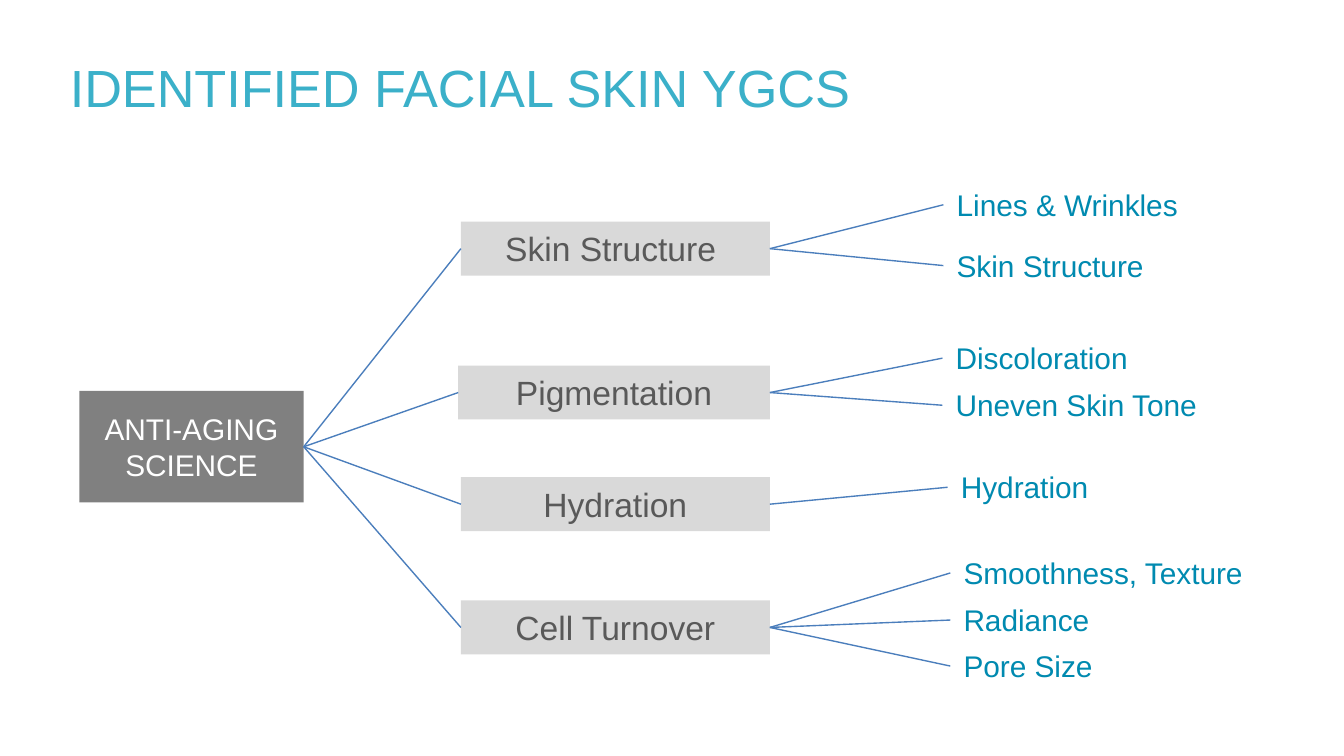
import pptx
import pptx.util
import pptx.dml.color
import pptx.enum.shapes
import pptx.enum.text
import pptx.oxml.ns
from lxml import etree

Cm = pptx.util.Cm
Pt = pptx.util.Pt
RGB = pptx.dml.color.RGBColor
Align = pptx.enum.text.PP_ALIGN
Anchor = pptx.enum.text.MSO_ANCHOR
Fit = pptx.enum.text.MSO_AUTO_SIZE

AQUA = RGB(0x3B, 0xB0, 0xC9)
TEAL = RGB(0x00, 0x8A, 0xB0)
DARK = RGB(0x80, 0x80, 0x80)
PALE = RGB(0xD9, 0xD9, 0xD9)
INK = RGB(0x59, 0x59, 0x59)
WHITE = RGB(0xFF, 0xFF, 0xFF)
BLUE = RGB(0x4B, 0x7E, 0xBC)

EDGE = 14.55
GROUPS = [
    ("Skin Structure ", 8.71, 4.19, 17.83,
     [("Lines & Wrinkles", 3.4), ("Skin Structure", 4.55)]),
    ("Pigmentation", 8.66, 6.91, 17.81,
     [("Discoloration", 6.3), ("Uneven Skin Tone", 7.19)]),
    ("Hydration", 8.71, 9.02, 17.91, [("Hydration", 8.74)]),
    ("Cell Turnover", 8.71, 11.35, 17.96,
     [("Smoothness, Texture", 10.36), ("Radiance", 11.25), ("Pore Size", 12.12)]),
]


def write(shape, text, size, color, align=Align.LEFT, anchor=Anchor.TOP, fit=Fit.NONE):
    frame = shape.text_frame
    frame.text = text
    frame.word_wrap = True
    frame.auto_size = fit
    frame.vertical_anchor = anchor
    para = frame.paragraphs[0]
    para.alignment = align
    font = para.runs[0].font
    font.name = "Arial"
    font.size = Pt(size)
    font.color.rgb = color


def add_title(slide, box, text):
    shape = slide.shapes.add_textbox(*map(Cm, box))
    write(shape, text, 28, AQUA, anchor=Anchor.MIDDLE)


def add_block(slide, box, fill):
    kind = pptx.enum.shapes.MSO_SHAPE.RECTANGLE
    shape = slide.shapes.add_shape(kind, *map(Cm, box))
    shape.shadow.inherit = False
    shape.fill.solid()
    shape.fill.fore_color.rgb = fill
    shape.line.fill.background()
    return shape


def add_root(slide, box, text):
    shape = add_block(slide, box, DARK)
    write(shape, text, 16, WHITE, Align.CENTER, Anchor.MIDDLE)
    return shape


def add_branch(slide, box, text):
    shape = add_block(slide, box, PALE)
    write(shape, text, 18, INK, Align.CENTER, fit=Fit.SHAPE_TO_FIT_TEXT)
    return shape


def add_leaf(slide, box, text):
    shape = slide.shapes.add_textbox(*map(Cm, box))
    write(shape, text, 16, TEAL, fit=Fit.SHAPE_TO_FIT_TEXT)
    return shape


def link(slide, start, end):
    kind = pptx.enum.shapes.MSO_CONNECTOR.STRAIGHT
    line = slide.shapes.add_connector(kind, 0, 0, 0, 0)
    line.begin_connect(start, 3)
    line.end_connect(end, 1)
    line.line.color.rgb = BLUE
    line.line.width = Pt(0.75)
    etree.SubElement(line._element.spPr, pptx.oxml.ns.qn("a:effectLst"))


def add_tree(slide, box):
    root = add_root(slide, box, "ANTI-AGING SCIENCE")
    pairs = []
    nodes = []
    for text, left, top, _, _ in GROUPS:
        node = add_branch(slide, (left, top, EDGE - left, 1.02), text)
        nodes.append(node)
        pairs.append((root, node))
    for node, (_, _, _, left, items) in zip(nodes, GROUPS):
        for text, top in items:
            pairs.append((node, add_leaf(slide, (left, top, 6.6, 0.94), text)))
    for start, end in pairs:
        link(slide, start, end)


def main():
    deck = pptx.Presentation()
    deck.slide_width = Cm(25.4)
    deck.slide_height = Cm(14.29)
    slide = deck.slides.add_slide(deck.slide_layouts[6])
    add_title(slide, (1.07, 0.69, 25.2, 1.9), "IDENTIFIED FACIAL SKIN YGCS")
    add_tree(slide, (1.5, 7.39, 4.24, 2.11))
    deck.save("out.pptx")


if __name__ == "__main__":
    main()
